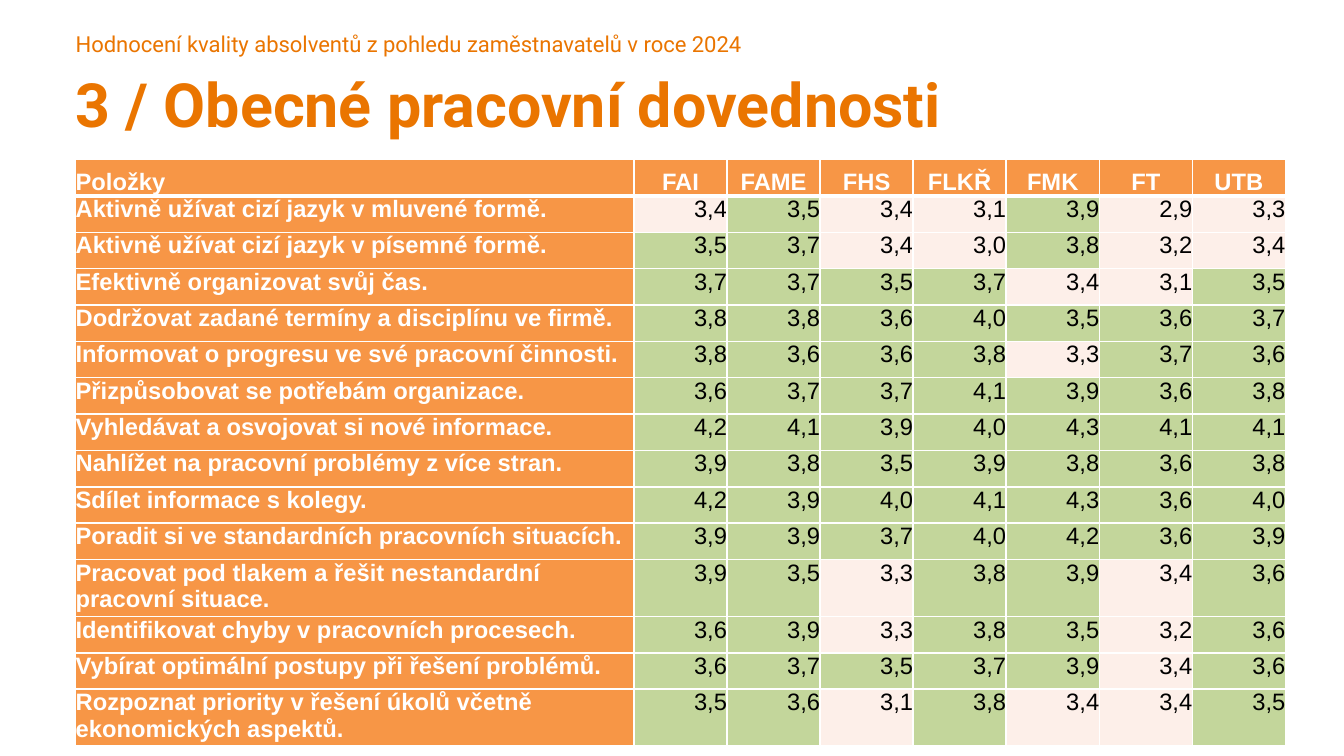
from dataclasses import dataclass

from lxml import etree
from pptx import Presentation
from pptx import util as u
from pptx.dml.color import RGBColor
from pptx.enum import text
from pptx.oxml.ns import qn

# Grid: 13 equal columns, the item column takes 6 of them
SLIDE_W, SLIDE_H = 11.02, 6.2
LEFT, WIDTH = 0.62, 9.92
ITEM_SPAN = 6
COL = WIDTH / 13
ROW = SLIDE_H / 20.8
TABLE_TOP = 1.31

BRAND, ORANGE, WHITE, BLACK = "EA7500", "F79646", "FFFFFF", "000000"
GREEN, PINK = "C3D69B", "FDEFE9"
THRESHOLD = 3.5
THIN, THICK = 1, 3


@dataclass
class Heading:
    content: str
    top: float
    height: float
    size: int
    bold: bool


@dataclass
class Skill:
    name: str
    scores: str


HEADINGS = [
    Heading("3 / Obecné pracovní dovednosti", 0.55, 0.6, 36, True),
    Heading("Hodnocení kvality absolventů z pohledu zaměstnavatelů v roce 2024", 0.25, 0.22, 13, False),
]
HEADER = Skill("Položky", "FAI FAME FHS FLKŘ FMK FT UTB")
SKILLS = [
    Skill("Aktivně užívat cizí jazyk v mluvené formě.", "3,4 3,5 3,4 3,1 3,9 2,9 3,3"),
    Skill("Aktivně užívat cizí jazyk v písemné formě.", "3,5 3,7 3,4 3,0 3,8 3,2 3,4"),
    Skill("Efektivně organizovat svůj čas.", "3,7 3,7 3,5 3,7 3,4 3,1 3,5"),
    Skill("Dodržovat zadané termíny a disciplínu ve firmě.", "3,8 3,8 3,6 4,0 3,5 3,6 3,7"),
    Skill("Informovat o progresu ve své pracovní činnosti.", "3,8 3,6 3,6 3,8 3,3 3,7 3,6"),
    Skill("Přizpůsobovat se potřebám organizace.", "3,6 3,7 3,7 4,1 3,9 3,6 3,8"),
    Skill("Vyhledávat a osvojovat si nové informace.", "4,2 4,1 3,9 4,0 4,3 4,1 4,1"),
    Skill("Nahlížet na pracovní problémy z více stran.", "3,9 3,8 3,5 3,9 3,8 3,6 3,8"),
    Skill("Sdílet informace s kolegy.", "4,2 3,9 4,0 4,1 4,3 3,6 4,0"),
    Skill("Poradit si ve standardních pracovních situacích.", "3,9 3,9 3,7 4,0 4,2 3,6 3,9"),
    Skill("Pracovat pod tlakem a řešit nestandardní pracovní situace.", "3,9 3,5 3,3 3,8 3,9 3,4 3,6"),
    Skill("Identifikovat chyby v pracovních procesech.", "3,6 3,9 3,3 3,8 3,5 3,2 3,6"),
    Skill("Vybírat optimální postupy při řešení problémů.", "3,6 3,7 3,5 3,7 3,9 3,4 3,6"),
    Skill("Rozpoznat priority v řešení úkolů včetně ekonomických aspektů.", "3,5 3,6 3,1 3,8 3,4 3,4 3,5"),
]


def paint(fmt, color: str) -> None:
    """Set a solid fill from a hex string."""
    fmt.solid()
    fmt.fore_color.rgb = RGBColor.from_string(color)


def write(tf, content: str, *, size: int, color: str, font: str,
          bold: bool = False, align=text.PP_ALIGN.LEFT) -> None:
    p = tf.paragraphs[0]
    p.alignment = align
    r = p.add_run()
    r.text = content
    r.font.size, r.font.name, r.font.bold = u.Pt(size), font, bold
    paint(r.font.fill, color)


def add_heading(slide, heading: Heading) -> None:
    sp = slide.shapes.add_textbox(u.Inches(LEFT), u.Inches(heading.top),
                                  u.Inches(WIDTH), u.Inches(heading.height))
    tf = sp.text_frame
    tf.word_wrap = True
    tf.margin_left = tf.margin_right = tf.margin_top = tf.margin_bottom = 0
    write(tf, heading.content, size=heading.size, color=BRAND, font="Roboto", bold=heading.bold)


def add_borders(cell, top: int, bottom: int) -> None:
    """Borders stand before the fill in the cell properties."""
    props = cell._tc.get_or_add_tcPr()
    widths = {"a:lnL": THIN, "a:lnR": THIN, "a:lnT": top, "a:lnB": bottom}
    for i, (tag, width) in enumerate(widths.items()):
        ln = etree.Element(qn(tag), w=str(u.Pt(width)))
        fill = etree.SubElement(ln, qn("a:solidFill"))
        etree.SubElement(fill, qn("a:srgbClr"), val=WHITE)
        props.insert(i, ln)


def fill_cell(cell, content: str, row: int, col: int) -> None:
    cell.margin_left = cell.margin_right = cell.margin_top = cell.margin_bottom = 0
    is_label = row == 0 or col == 0
    if row == 0:
        cell.vertical_anchor = text.MSO_ANCHOR.BOTTOM
    if col == 0:
        align = text.PP_ALIGN.LEFT
    else:
        align = text.PP_ALIGN.CENTER if row == 0 else text.PP_ALIGN.RIGHT
    if is_label:
        background = ORANGE
    else:
        background = GREEN if float(content.replace(",", ".")) >= THRESHOLD else PINK
    paint(cell.fill, background)
    add_borders(cell, THICK if row == 1 else THIN, THICK if row == 0 else THIN)
    write(cell.text_frame, content, size=14, color=WHITE if is_label else BLACK,
          font="Arial", bold=is_label, align=align)


def add_score_table(slide, rows: list[Skill]) -> None:
    faculties = len(HEADER.scores.split())
    frame = slide.shapes.add_table(len(rows), faculties + 1, u.Inches(LEFT), u.Inches(TABLE_TOP),
                                   u.Inches(WIDTH), u.Inches(ROW * len(rows)))
    table = frame.table
    table.first_row = table.horz_banding = False
    for i, column in enumerate(table.columns):
        column.width = u.Inches(COL * (ITEM_SPAN if i == 0 else 1))
    for i, skill in enumerate(rows):
        table.rows[i].height = u.Inches(ROW)
        for j, content in enumerate([skill.name, *skill.scores.split()]):
            fill_cell(table.cell(i, j), content, i, j)


def main() -> None:
    prs = Presentation()
    prs.slide_width, prs.slide_height = u.Inches(SLIDE_W), u.Inches(SLIDE_H)
    slide = prs.slides.add_slide(prs.slide_layouts[6])
    # Title and running head
    for heading in HEADINGS:
        add_heading(slide, heading)
    # Scores by faculty
    add_score_table(slide, [HEADER, *SKILLS])
    prs.save("out.pptx")


if __name__ == "__main__":
    main()
